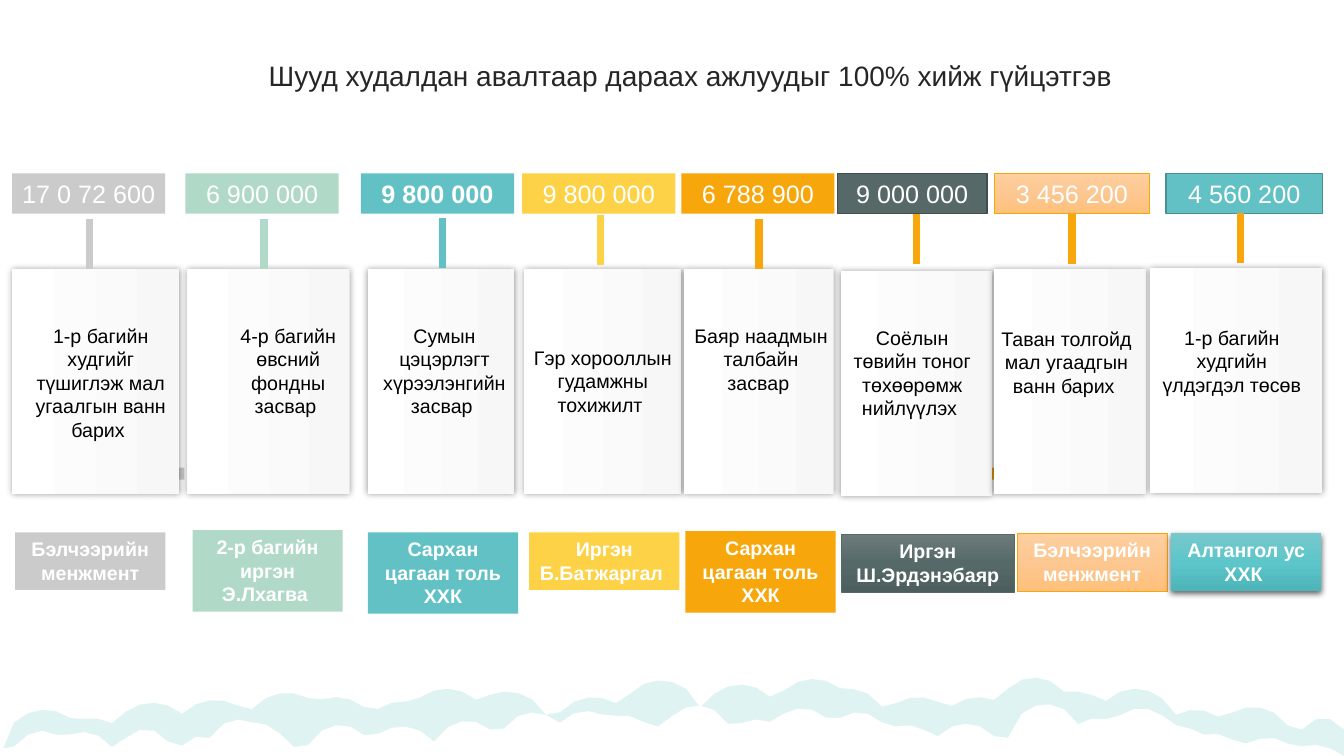
from dataclasses import dataclass
from math import sqrt

from lxml import etree
from pptx import Presentation
from pptx.dml.color import RGBColor
from pptx.enum.shapes import MSO_CONNECTOR, MSO_SHAPE
from pptx.enum.text import MSO_ANCHOR, MSO_AUTO_SIZE, PP_ALIGN
from pptx.oxml.ns import qn
from pptx.util import Pt

RECTANGLE = MSO_SHAPE.RECTANGLE
STRAIGHT = MSO_CONNECTOR.STRAIGHT
CENTER = PP_ALIGN.CENTER
TOP, MIDDLE = MSO_ANCHOR.TOP, MSO_ANCHOR.MIDDLE
GROW = MSO_AUTO_SIZE.SHAPE_TO_FIT_TEXT
SLIDE_WIDTH, SLIDE_HEIGHT = 960, 540
CLOUD_STEP = 10


@dataclass(frozen=True)
class Theme:
    font: str = "Arial"
    title_size: int = 20
    amount_size: int = 18
    body_size: int = 14
    title: str = "262626"
    black: str = "000000"
    white: str = "FFFFFF"
    cloud: str = "E0F3F3"
    gray: str = "CBCBCB"
    mint: str = "B1D9C7"
    teal: str = "62C1C5"
    teal_edge: str = "498F92"
    yellow: str = "FDD247"
    orange: str = "F7A60B"
    slate: str = "576868"
    slate_edge: str = "404D4D"
    # Gradients: angle, then evenly spaced stops
    card: tuple = (180, "F7F7F7", "FFFFFF")
    slate_fade: tuple = (90, "6D7B7B", "566969", "4C5E5E")
    peach_fade: tuple = (90, "FECF9F", "FCC791", "FFC07C")
    teal_fade: tuple = (90, "76C8CC", "5DC6CA", "4DB5B9")
    # Shadows: opacity %, blur, distance, direction
    card_shadow: tuple = (40, 5, 0, 0)
    payee_shadow: tuple = (63, 4.5, 1.5, 90)


THEME = Theme()


@dataclass(frozen=True)
class Project:
    amount: str
    work: str
    payee: str
    amount_box: tuple  # left, width
    card_box: tuple  # left, top, width
    work_box: tuple  # left, top, line count
    payee_box: tuple  # left, top, width, line count
    tick: tuple  # x, top
    amount_fill: object
    payee_fill: object
    tick_color: str
    amount_line: tuple = None  # colour, width
    payee_line: tuple = None
    payee_shadow: tuple = None
    amount_bold: bool = False


PROJECTS = [
    Project("17 0 72 600", "1-р багийн худгийг түшиглэж мал угаалгын ванн барих ",
            "Бэлчээрийн менжмент", (8.6, 109.4), (8.6, 192.2, 119.5), (15.1, 227.5, 5),
            (10.8, 380.2, 107.3, 2), (64.1, 156.2), THEME.gray, THEME.gray, THEME.gray),
    Project("6 900 000", "4-р багийн өвсний фондны засвар ",
            "2-р багийн иргэн Э.Лхагва ", (132.5, 109.4), (133.9, 192.2, 115.9), (149, 227.5, 3),
            (137.5, 378.7, 107.3, 3), (188.6, 156.2), THEME.mint, THEME.mint, THEME.mint),
    Project("9 800 000", "Сумын цэцэрлэгт хүрээлэнгийн засвар ",
            "Сархан цагаан толь ХХК", (257.8, 109.4), (262.8, 192.2, 104.4), (260.6, 227.5, 3),
            (262.8, 380.2, 107.3, 3), (316.1, 155.5), THEME.teal, THEME.teal, THEME.teal,
            amount_bold=True),
    Project("9 800 000", "Гэр хорооллын гудамжны тохижилт ",
            "Иргэн Б.Батжаргал ", (373, 109.4), (374.4, 192.2, 112.3), (373.7, 243.4, 3),
            (378, 380.2, 107.3, 2), (429.1, 153.4), THEME.yellow, THEME.yellow, THEME.yellow),
    Project("6 788 900", "Баяр наадмын талбайн засвар ",
            "Сархан цагаан толь ХХК", (486.7, 109.4), (488.9, 192.2, 106.6), (486.7, 227.5, 4),
            (489.6, 379.4, 107.3, 3), (542.2, 156.2), THEME.orange, THEME.orange, THEME.orange),
    Project("9 000 000", "Соёлын төвийн тоног төхөөрөмж нийлүүлэх ",
            "Иргэн Ш.Эрдэнэбаяр", (598.3, 106.6), (600.5, 193.7, 108), (594.7, 229, 5),
            (601.2, 381.6, 123.1, 2), (654.5, 152.6), THEME.slate, THEME.slate_fade, THEME.orange,
            (THEME.slate_edge, 1), (THEME.slate, 0.5)),
    Project("3 456 200", "Таван толгойд мал угаадгын ванн барих ",
            "Бэлчээрийн менжмент", (710.6, 110.2), (709.9, 192.2, 108.7), (704.9, 229.7, 4),
            (726.5, 380.9, 107.3, 2), (765.7, 152.6), THEME.peach_fade, THEME.peach_fade,
            THEME.orange, (THEME.orange, 0.5), (THEME.orange, 0.5)),
    Project("4 560 200", "1-р багийн худгийн үлдэгдэл төсөв ",
            "Алтангол ус ХХК ", (833, 111.6), (821.5, 191.5, 123.1), (823, 229, 4),
            (836.6, 380.9, 107.3, 2), (886.3, 151.9), THEME.teal, THEME.teal_fade, THEME.orange,
            (THEME.teal_edge, 1), payee_shadow=THEME.payee_shadow),
]

# Cloud puffs: centre x, top y, radius
BACK_PUFFS = [
    (32, 507, 31), (66, 513, 29), (109, 502, 32), (154, 500, 33), (205, 495, 33), (240, 498, 32),
    (288, 501, 33), (319, 492, 32), (362, 494, 32), (424, 498, 32), (472, 486, 30), (529, 489, 30),
    (581, 485, 31), (606, 492, 29), (656, 498, 32), (699, 498, 32), (739, 484, 27), (768, 494, 30),
    (811, 492, 30), (854, 507, 29), (895, 505, 30), (945, 513, 18)]
FRONT_PUFFS = [
    (7, 533, 14), (30, 522, 19), (59, 523, 26), (104, 521, 19), (144, 526, 18), (170, 514, 19),
    (181, 516, 26), (217, 532, 16), (243, 518, 24), (287, 519, 30), (334, 515, 24), (381, 509, 25),
    (419, 508, 26), (444, 511, 29), (471, 519, 29), (498, 504, 25), (541, 514, 26), (573, 506, 25),
    (613, 509, 24), (647, 518, 26), (690, 517, 27), (720, 527, 22), (747, 503, 25), (784, 513, 25),
    (815, 506, 25), (840, 518, 22), (866, 524, 25), (889, 531, 22), (906, 527, 25), (938, 532, 29)]


def set_gradient(shape, angle, *colors):
    shape.fill.background()
    properties = shape._element.spPr
    gradient = etree.Element(qn("a:gradFill"), rotWithShape="1")
    stops = etree.SubElement(gradient, qn("a:gsLst"))
    for index, color in enumerate(colors):
        position = 100000 * index // (len(colors) - 1)
        stop = etree.SubElement(stops, qn("a:gs"), pos=str(position))
        etree.SubElement(stop, qn("a:srgbClr"), val=color)
    etree.SubElement(gradient, qn("a:lin"), ang=str(angle * 60000), scaled="0")
    properties.replace(properties.find(qn("a:noFill")), gradient)


def add_shadow(shape, opacity, blur, distance, direction):
    effects = shape._element.spPr.find(qn("a:effectLst"))
    shadow = etree.SubElement(effects, qn("a:outerShdw"), blurRad=str(Pt(blur)),
                              dist=str(Pt(distance)), dir=str(direction * 60000),
                              algn="ctr", rotWithShape="0")
    color = etree.SubElement(shadow, qn("a:srgbClr"), val=THEME.black)
    etree.SubElement(color, qn("a:alpha"), val=str(opacity * 1000))


def style_shape(shape, fill, line=None, shadow=None):
    shape.shadow.inherit = False
    if isinstance(fill, tuple):
        set_gradient(shape, *fill)
    else:
        shape.fill.solid()
        shape.fill.fore_color.rgb = RGBColor.from_string(fill)
    if line:
        shape.line.color.rgb = RGBColor.from_string(line[0])
        shape.line.width = Pt(line[1])
    else:
        shape.line.fill.background()
    if shadow:
        add_shadow(shape, *shadow)


def add_box(slide, box, fill, line=None, shadow=None):
    shape = slide.shapes.add_shape(RECTANGLE, *map(Pt, box))
    style_shape(shape, fill, line, shadow)
    return shape


def write_text(shape, text, size, color, bold=False, anchor=TOP):
    frame = shape.text_frame
    frame.word_wrap = True
    frame.vertical_anchor = anchor
    paragraph = frame.paragraphs[0]
    paragraph.alignment = CENTER
    run = paragraph.add_run()
    run.text = text
    run.font.name, run.font.size, run.font.bold = THEME.font, Pt(size), bold
    run.font.color.rgb = RGBColor.from_string(color)
    return frame


def text_height(lines):
    return 7.2 + 17 * lines


def add_tick(slide, x, top, color, amount, card):
    bottom = top + 36
    tick = slide.shapes.add_connector(STRAIGHT, Pt(x), Pt(top), Pt(x), Pt(bottom))
    tick.line.color.rgb = RGBColor.from_string(color)
    tick.line.width = Pt(5.25)
    etree.SubElement(tick._element.spPr, qn("a:effectLst"))
    # Join only the ends that meet the middle of a side
    ends = [(amount, 2, amount.top + amount.height, top, tick.begin_connect),
            (card, 0, card.top, bottom, tick.end_connect)]
    for box, site, edge, y, connect in ends:
        middle = box.left + box.width / 2
        if max(abs(middle - Pt(x)), abs(edge - Pt(y))) < Pt(0.5):
            connect(box, site)


def add_cloud(slide, puffs, color):
    def skyline(x):
        return min([SLIDE_HEIGHT] + [top + radius - sqrt(radius ** 2 - (x - center) ** 2)
                                     for center, top, radius in puffs if abs(x - center) <= radius])

    outline = [(Pt(x), Pt(skyline(x))) for x in range(0, SLIDE_WIDTH + 1, CLOUD_STEP)]
    builder = slide.shapes.build_freeform(0, Pt(SLIDE_HEIGHT))
    builder.add_line_segments(outline + [(Pt(SLIDE_WIDTH), Pt(SLIDE_HEIGHT))])
    style_shape(builder.convert_to_shape(), color)


def add_project(slide, project):
    left, width = project.amount_box
    amount = add_box(slide, (left, 123.8, width, 28.8), project.amount_fill, project.amount_line)
    write_text(amount, project.amount, THEME.amount_size, THEME.white, project.amount_bold)

    card = add_box(slide, (*project.card_box, 160.6), THEME.card, shadow=THEME.card_shadow)
    left, top, lines = project.work_box
    work = slide.shapes.add_textbox(Pt(left), Pt(top), Pt(113.8), Pt(text_height(lines)))
    write_text(work, project.work, THEME.body_size, THEME.black).auto_size = GROW

    *corner, lines = project.payee_box
    payee = add_box(slide, (*corner, text_height(lines)), project.payee_fill,
                    project.payee_line, project.payee_shadow)
    write_text(payee, project.payee, THEME.body_size, THEME.white, bold=True)
    add_tick(slide, *project.tick, project.tick_color, amount, card)


def main():
    presentation = Presentation()
    presentation.slide_width, presentation.slide_height = Pt(SLIDE_WIDTH), Pt(SLIDE_HEIGHT)
    slide = presentation.slides.add_slide(presentation.slide_layouts[6])

    # Clouds along the bottom
    add_cloud(slide, BACK_PUFFS, THEME.cloud)
    add_cloud(slide, FRONT_PUFFS, THEME.white)

    # Title
    title = slide.shapes.add_textbox(Pt(126.7), Pt(26.6), Pt(733), Pt(56.9))
    frame = write_text(title, "Шууд худалдан авалтаар дараах ажлуудыг 100% хийж гүйцэтгэв",
                       THEME.title_size, THEME.title, anchor=MIDDLE)
    frame.paragraphs[0].line_spacing = 0.9

    # Bars behind the cards
    for left, color in ((8.6, THEME.gray), (669.6, THEME.orange)):
        add_box(slide, (left, 334.1, 123.1, 8.6), color)

    # Projects
    for project in PROJECTS:
        add_project(slide, project)

    presentation.save("out.pptx")


if __name__ == "__main__":
    main()
